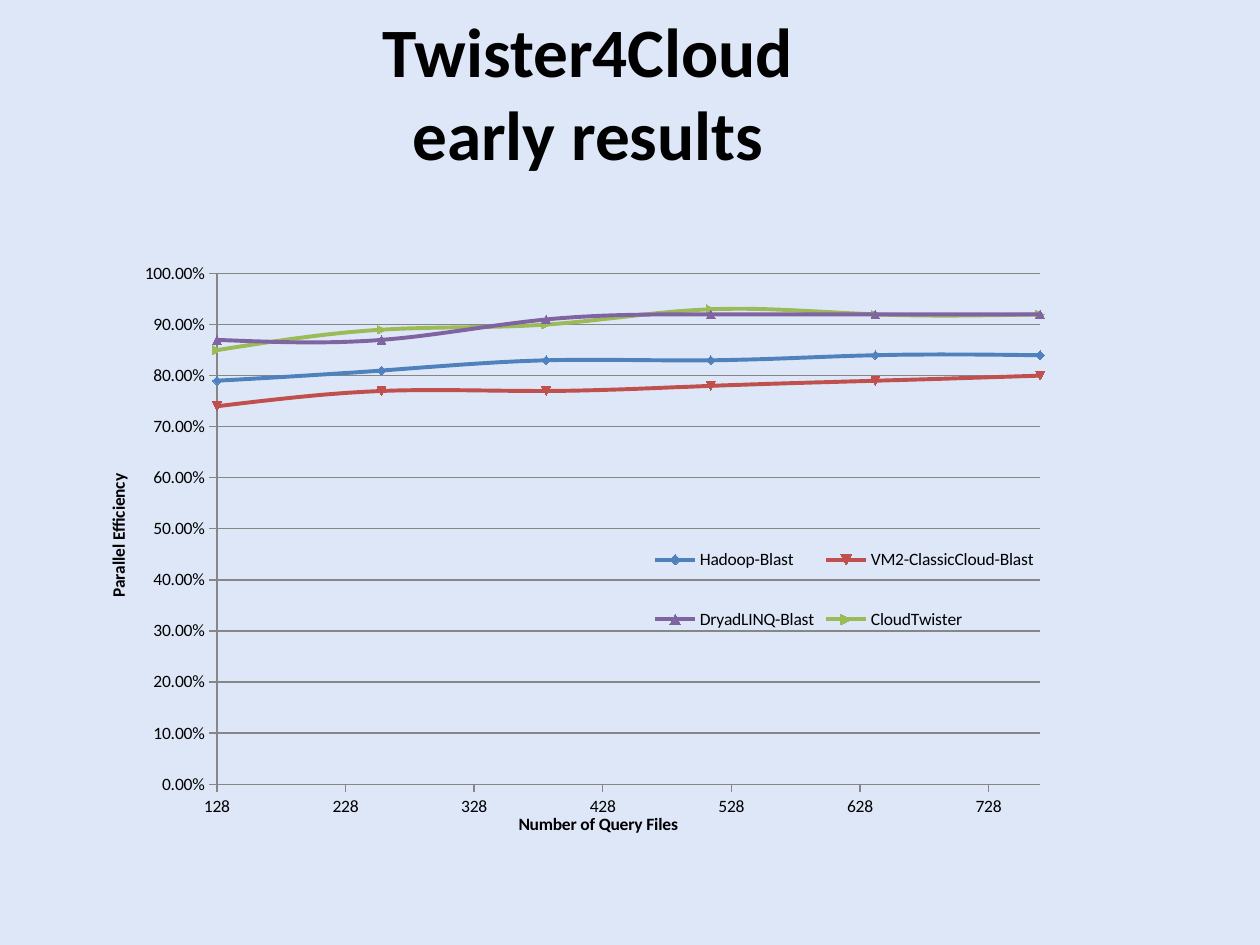
import pptx
import pptx.chart.data
import pptx.dml.color
import pptx.enum.chart
import pptx.enum.text
import pptx.oxml
import pptx.oxml.ns
import pptx.util

FONT = "Calibri"
FILES = range(128, 769, 128)
SERIES = [
    ("Hadoop-Blast", "4F81BD", (0.79, 0.81, 0.83, 0.83, 0.84, 0.84)),
    ("VM2-ClassicCloud-Blast", "C0504D", (0.74, 0.77, 0.77, 0.78, 0.79, 0.8)),
    ("DryadLINQ-Blast", "8064A2", (0.87, 0.87, 0.91, 0.92, 0.92, 0.92)),
    ("CloudTwister", "9BBB59", (0.85, 0.89, 0.9, 0.93, 0.92, 0.92)),
]


def px(n):
    return pptx.util.Emu(round(n * 914400 / 126))


def rgb(text):
    return pptx.dml.color.RGBColor.from_string(text)


def style(font, size, bold=False):
    font.name = FONT
    font.size = pptx.util.Pt(size)
    font.bold = bold
    font.color.rgb = rgb("000000")


def lay(node, index, **parts):
    """Give a chart part a manual layout, in fractions of the chart."""
    tag = pptx.oxml.ns.qn("c:layout")
    old = node.find(tag)
    if old is not None:
        index = node.index(old)
        node.remove(old)
    inner = '<c:layoutTarget val="inner"/>' if node.tag.endswith("plotArea") else ""
    modes = "".join(f'<c:{k}Mode val="edge"/>' for k in "xy")
    sizes = "".join(f'<c:{k} val="{v}"/>' for k, v in parts.items())
    node.insert(index, pptx.oxml.parse_xml(
        f"<c:layout {pptx.oxml.ns.nsdecls('c')}><c:manualLayout>"
        f"{inner}{modes}{sizes}</c:manualLayout></c:layout>"))


def set_axis(axis, name, low, high, step, form, x, y):
    axis.minimum_scale, axis.maximum_scale = low, high
    axis.major_unit = step
    axis.major_tick_mark = pptx.enum.chart.XL_TICK_MARK.OUTSIDE
    axis.minor_tick_mark = pptx.enum.chart.XL_TICK_MARK.NONE
    axis.tick_labels.number_format = form
    axis.tick_labels.number_format_is_linked = False
    axis.format.line.color.rgb = rgb("868686")
    title = axis.axis_title
    title.text_frame.text = name
    style(title.text_frame.paragraphs[0].runs[0].font, 10, True)
    lay(title._element, 1, x=x, y=y)


def add_title(slide, left, top, width, height):
    title = slide.shapes.title
    title.left, title.top = px(left), px(top)
    title.width, title.height = px(width), px(height)
    frame = title.text_frame
    frame.text = "Twister4Cloud\vearly results"
    frame.word_wrap = True
    frame.vertical_anchor = pptx.enum.text.MSO_ANCHOR.MIDDLE
    para = frame.paragraphs[0]
    para.alignment = pptx.enum.text.PP_ALIGN.CENTER
    for run in para.runs:
        style(run.font, 39.6, True)


def add_plot(slide, left, top, width, height):
    data = pptx.chart.data.XyChartData()
    for name, _, values in SERIES:
        series = data.add_series(name)
        for x, y in zip(FILES, values):
            series.add_data_point(x, y)
    kind = pptx.enum.chart.XL_CHART_TYPE.XY_SCATTER_SMOOTH
    chart = slide.shapes.add_chart(
        kind, px(left), px(top), px(width), px(height), data).chart
    style(chart.font, 10)
    chart.has_title = False
    for series, (_, color, _) in zip(chart.plots[0].series, SERIES):
        series.format.line.color.rgb = rgb(color)
        series.format.line.width = pptx.util.Pt(2.25)
        smooth = series._element.find(pptx.oxml.ns.qn("c:smooth"))
        smooth.set("val", "1")

    set_axis(chart.category_axis, "Number of Query Files",
             128, 768, 100, "General", 0.46, 0.96)
    set_axis(chart.value_axis, "Parallel Efficiency",
             0, 1, 0.1, "0.00%", 0.06, 0.43)
    chart.category_axis.has_major_gridlines = False
    chart.value_axis.has_major_gridlines = True
    chart.value_axis.major_gridlines.format.line.color.rgb = rgb("868686")

    chart.has_legend = True
    legend = chart.legend
    legend.position = pptx.enum.chart.XL_LEGEND_POSITION.RIGHT
    legend.include_in_layout = False
    style(legend.font, 10)
    lay(legend._element, 1, x=0.59, y=0.49, w=0.38, h=0.25)
    area = chart._chartSpace.chart.plotArea
    lay(area, 0, x=0.17, y=0.12, w=0.8, h=0.8)


def main():
    deck = pptx.Presentation()
    deck.slide_width, deck.slide_height = px(1260), px(945)
    slide = deck.slides.add_slide(deck.slide_layouts.get_by_name("Title Only"))
    fill = slide.background.fill
    fill.solid()
    fill.fore_color.rgb = rgb("DEE7F8")
    add_title(slide, 21, 42, 1134, 98)
    add_plot(slide, 42, 197, 1029, 643)
    deck.save("out.pptx")


if __name__ == "__main__":
    main()
